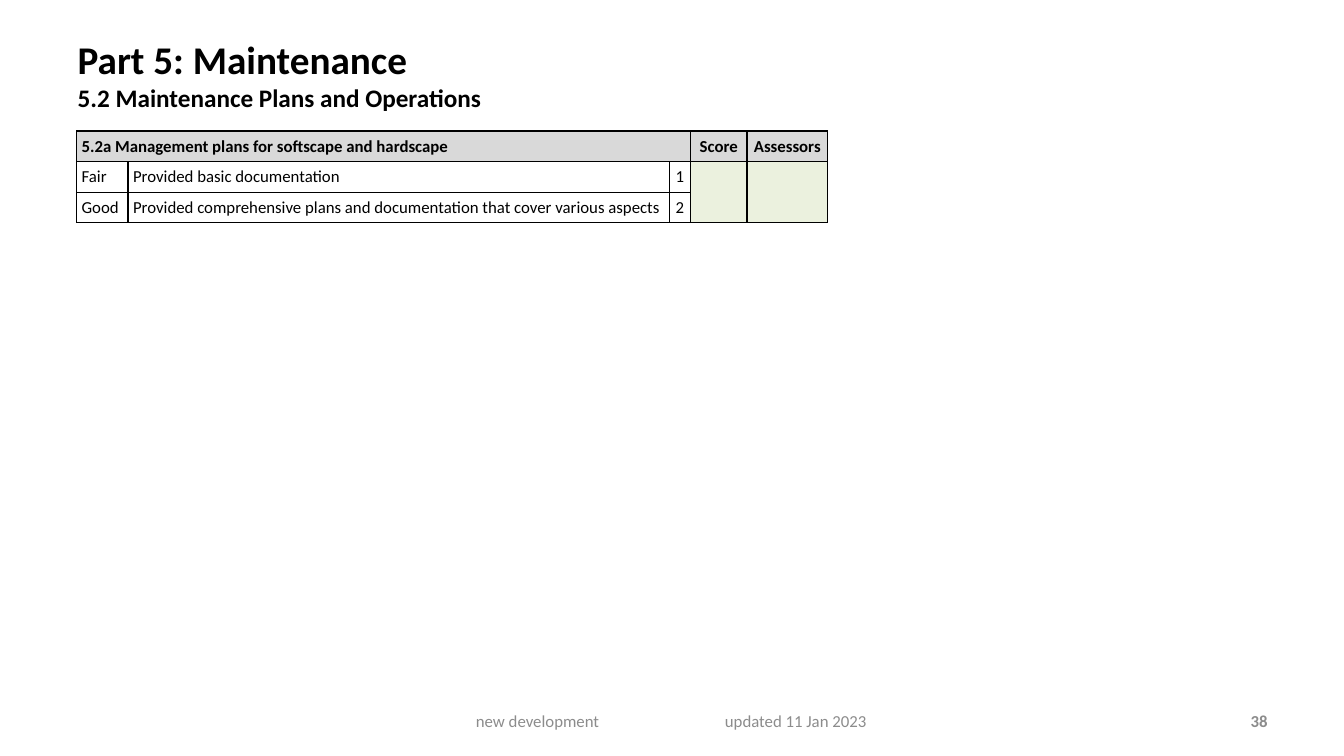
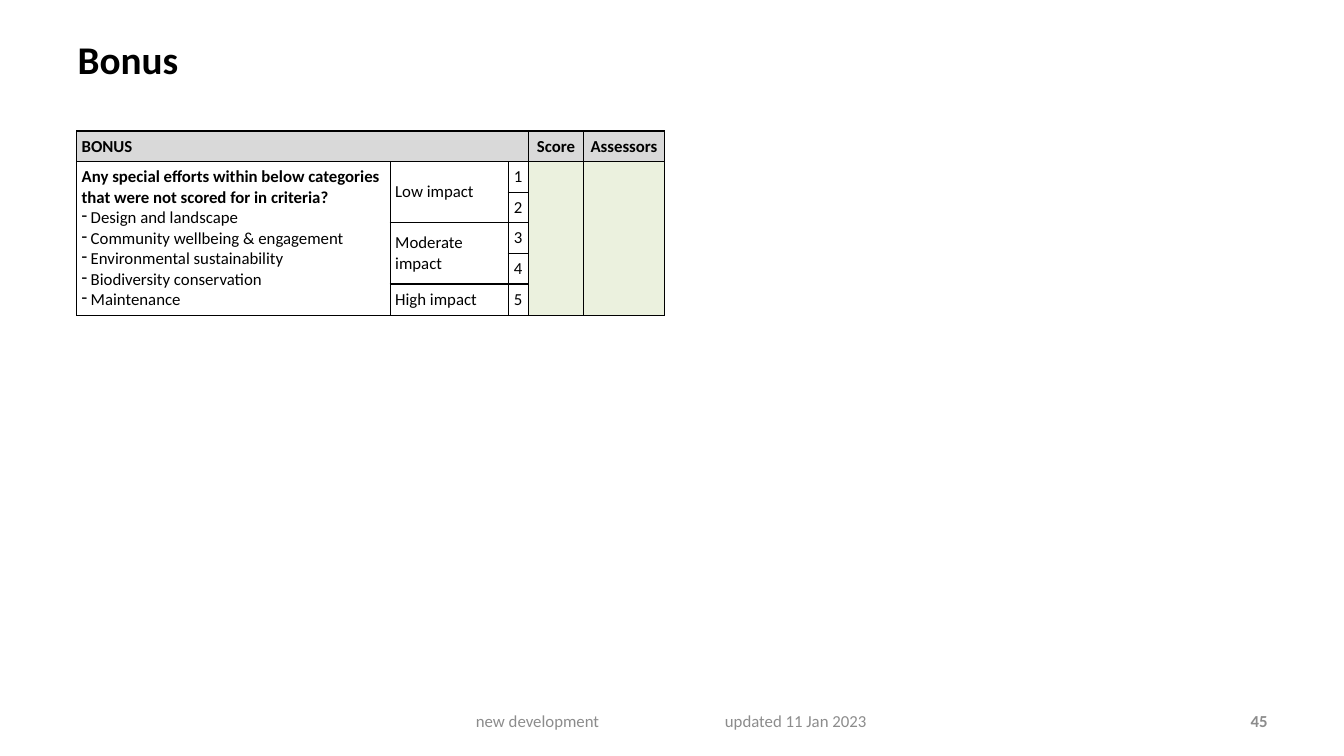
import pptx
import pptx.util
import pptx.dml.color
import pptx.enum.text
import pptx.oxml.ns
from lxml import etree

Inches, Pt = pptx.util.Inches, pptx.util.Pt
RGBColor = pptx.dml.color.RGBColor
ALIGN, ANCHOR = pptx.enum.text.PP_ALIGN, pptx.enum.text.MSO_ANCHOR
qn = pptx.oxml.ns.qn

# Content: "<" joins a cell to its left neighbour, "^" to the one above;
# a list in a cell is a bold question followed by bulleted answers
FOOTER = "new development\tupdated 11 Jan 2023"
BONUS = ["Any special efforts within below categories that were not scored for in criteria?",
         "Design and landscape", "Community wellbeing & engagement",
         "Environmental sustainability", "Biodiversity conservation", "Maintenance"]
SLIDES = [
    dict(number=38, title="Part 5: Maintenance",
         subtitle="5.2 Maintenance Plans and Operations",
         cols=[0.51, 5.37, 0.21, 0.56, 0.8],
         rows=[["5.2a Management plans for softscape and hardscape", "<", "<", "Score", "Assessors"],
               ["Fair", "Provided basic documentation", "1", "", ""],
               ["Good", "Provided comprehensive plans and documentation that cover various aspects",
                "2", "^", "^"]]),
    dict(number=45, title="Bonus", subtitle=None,
         cols=[3.11, 1.17, 0.2, 0.55, 0.8],
         rows=[["BONUS", "<", "<", "Score", "Assessors"],
               [BONUS, "Low impact", "1", "", ""],
               ["^", "^", "2", "^", "^"],
               ["^", "Moderate impact", "3", "^", "^"],
               ["^", "^", "4", "^", "^"],
               ["^", "High impact", "5", "^", "^"]]),
]

# Shared style
FONT = "Calibri"
BLACK = RGBColor(0x00, 0x00, 0x00)
GREY = RGBColor(0x8C, 0x8C, 0x8C)
HEADER_FILL = RGBColor(0xD9, 0xD9, 0xD9)
SCORE_FILL = RGBColor(0xEB, 0xF1, 0xDE)
ROW_H, PAD, DASH_INDENT = 0.3, 0.05, 0.09
FIRST_CENTRED, FIRST_SCORE = 2, 3


def add_text(p, text, size=12, bold=False, color=BLACK, align=ALIGN.LEFT):
    p.alignment = align
    r = p.add_run()
    r.text = text
    r.font.name, r.font.size, r.font.bold = FONT, Pt(size), bold
    r.font.color.rgb = color


def add_dash(p):
    pPr = p._p.get_or_add_pPr()
    pPr.set("marL", str(Inches(DASH_INDENT)))
    pPr.set("indent", str(-Inches(DASH_INDENT)))
    etree.SubElement(pPr, qn("a:buChar"), char="-")


def add_borders(cell):
    tcPr = cell._tc.get_or_add_tcPr()
    for side in ("lnL", "lnR", "lnT", "lnB"):
        ln = etree.SubElement(tcPr, qn("a:" + side), w=str(Pt(1)))
        fill = etree.SubElement(ln, qn("a:solidFill"))
        etree.SubElement(fill, qn("a:srgbClr"), val=str(BLACK))


def add_title(s, title, subtitle):
    box = s.shapes.title
    box.left, box.top, box.width, box.height = map(Inches, (0.67, 0.3, 10.36, 0.99))
    tf = box.text_frame
    tf.auto_size = pptx.enum.text.MSO_AUTO_SIZE.NONE
    tf.vertical_anchor = ANCHOR.TOP
    add_text(tf.paragraphs[0], title, 28, True)
    if subtitle:
        add_text(tf.add_paragraph(), subtitle, 18, True)


def add_footer_box(s, left, width):
    tf = s.shapes.add_textbox(Inches(left), Inches(6.95), Inches(width), Inches(0.4)).text_frame
    tf.word_wrap = True
    tf.vertical_anchor = ANCHOR.MIDDLE
    return tf


def add_footer(s, number):
    tf = add_footer_box(s, 4.56, 4.22)
    tf.margin_left = Inches(0.16)
    p = tf.paragraphs[0]
    tabs = etree.SubElement(p._p.get_or_add_pPr(), qn("a:tabLst"))
    etree.SubElement(tabs, qn("a:tab"), pos=str(Inches(2.47)), algn="l")
    add_text(p, FOOTER, color=GREY)
    add_text(add_footer_box(s, 9.56, 3.11).paragraphs[0], str(number), 12, True, GREY, ALIGN.RIGHT)


def fill_cell(cell, text, header, col):
    cell.margin_left = cell.margin_right = cell.margin_top = cell.margin_bottom = Inches(PAD)
    cell.vertical_anchor = ANCHOR.MIDDLE
    add_borders(cell)
    if header or col >= FIRST_SCORE:
        cell.fill.solid()
        cell.fill.fore_color.rgb = HEADER_FILL if header else SCORE_FILL
    else:
        cell.fill.background()
    tf = cell.text_frame
    p = tf.paragraphs[0]
    if text in ("", "<", "^"):
        # Keep empty cells from stretching their row
        etree.SubElement(p._p, qn("a:endParaRPr"), sz="1200")
    elif isinstance(text, list):
        add_text(p, text[0], bold=True)
        for item in text[1:]:
            p = tf.add_paragraph()
            add_dash(p)
            add_text(p, item)
    else:
        align = ALIGN.CENTER if col >= FIRST_CENTRED else ALIGN.LEFT
        add_text(p, text, bold=header, align=align)


def add_score_table(s, cols, rows):
    n = len(rows)
    tbl = s.shapes.add_table(n, len(cols), Inches(0.76), Inches(1.3),
                             Inches(sum(cols)), Inches(ROW_H * n)).table
    tbl.first_row = tbl.horz_banding = False
    for column, width in zip(tbl.columns, cols):
        column.width = Inches(width)
    for i, row in enumerate(rows):
        for j, text in enumerate(row):
            fill_cell(tbl.cell(i, j), text, i == 0, j)
    # Merge each cell with the marks that follow it
    for i, row in enumerate(rows):
        for j, text in enumerate(row):
            if text in ("<", "^"):
                continue
            right, bottom = j, i
            while right + 1 < len(cols) and row[right + 1] == "<":
                right += 1
            while bottom + 1 < n and rows[bottom + 1][j] == "^":
                bottom += 1
            if (bottom, right) != (i, j):
                tbl.cell(i, j).merge(tbl.cell(bottom, right))


def main():
    prs = pptx.Presentation()
    prs.slide_width, prs.slide_height = Inches(13.33), Inches(7.5)
    for page in SLIDES:
        s = prs.slides.add_slide(prs.slide_layouts[5])
        add_title(s, page["title"], page["subtitle"])
        add_score_table(s, page["cols"], page["rows"])
        add_footer(s, page["number"])
    prs.save("out.pptx")


if __name__ == "__main__":
    main()
